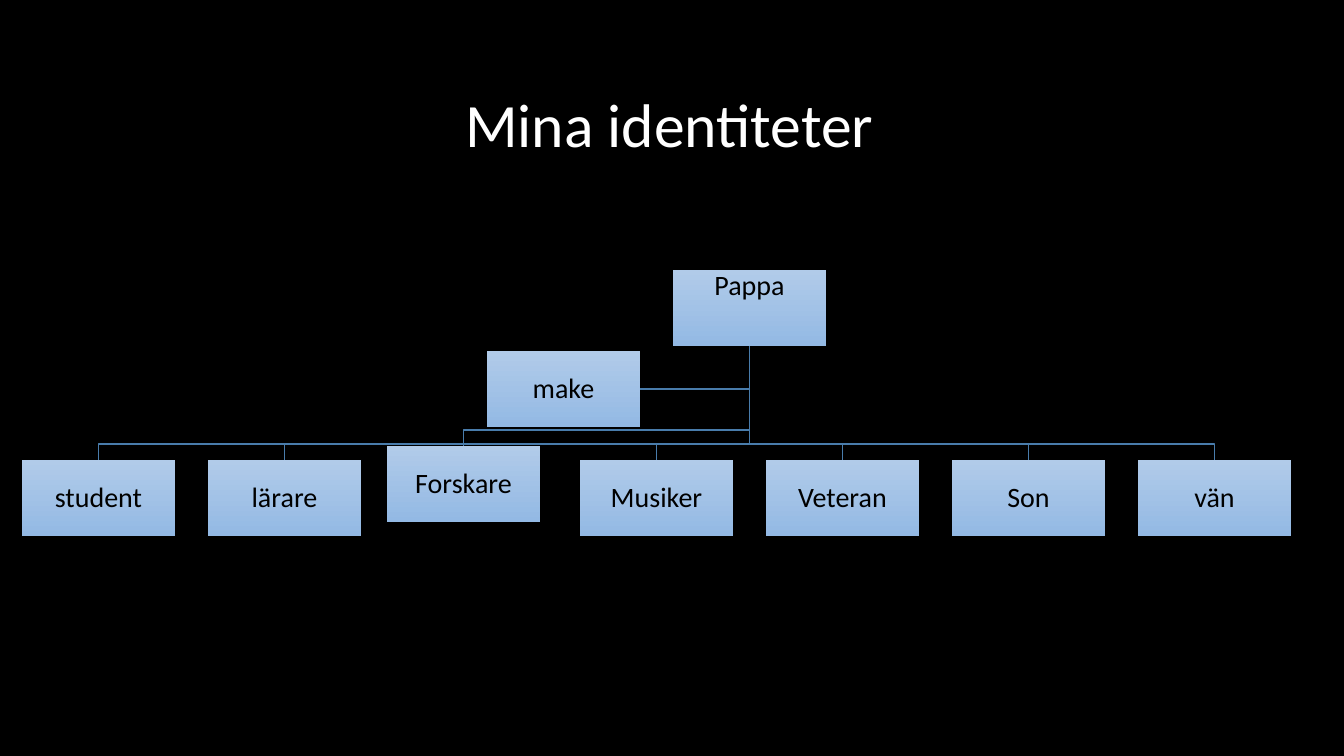
from pptx import Presentation
from pptx.dml.color import RGBColor
from pptx.enum.shapes import MSO_SHAPE
from pptx.enum.text import MSO_ANCHOR, PP_ALIGN
from pptx.util import Pt

PX = 914400 / 100.8
RECTANGLE = MSO_SHAPE.RECTANGLE
TOP, MIDDLE = MSO_ANCHOR.TOP, MSO_ANCHOR.MIDDLE
CENTER = PP_ALIGN.CENTER
COLORS = {
    "background": "000000",
    "title": "FFFFFF",
    "label": "000000",
    "line": "497CAB",
    "box_top": "B1CBE9",
    "box_bottom": "93B9E4",
}
BOX_WIDTH, BOX_HEIGHT = 153, 76


def px(length):
    return round(length * PX)


def write_text(shape, text, size, color, anchor, inset):
    frame = shape.text_frame
    frame.text = text
    frame.word_wrap = True
    frame.vertical_anchor = anchor
    frame.margin_left = frame.margin_right = px(inset)
    frame.margin_top = frame.margin_bottom = px(inset)
    paragraph = frame.paragraphs[0]
    paragraph.alignment = CENTER
    paragraph.line_spacing = 0.9
    font = paragraph.runs[0].font
    font.name = "Calibri"
    font.size = Pt(size)
    font.color.rgb = RGBColor.from_string(COLORS[color])


presentation = Presentation()
presentation.slide_width = px(1344)
presentation.slide_height = px(756)
slide = presentation.slides.add_slide(presentation.slide_layouts[6])
slide.background.fill.solid()
slide.background.fill.fore_color.rgb = RGBColor.from_string(COLORS["background"])

# Title
title = slide.shapes.add_textbox(px(90), px(55), px(1159), px(146))
write_text(title, "Mina identiteter", 44, "title", MIDDLE, 5)

# Boxes: parent, assistant and a row of evenly spaced children
parent = ("Pappa", 673, 270)
assistant = ("make", 487, 351)
names = ["student", "lärare", "Forskare", "Musiker", "Veteran", "Son", "vän"]
children = [(name, 22 + 186 * index, 460) for index, name in enumerate(names)]
children[2] = ("Forskare", 387, 446)

# Elbow lines from the parent
trunk_x = parent[1] + BOX_WIDTH / 2
trunk_y = parent[2] + BOX_HEIGHT
assistant_y = assistant[2] + BOX_HEIGHT / 2
routes = [[(trunk_x, assistant_y), (assistant[1] + BOX_WIDTH, assistant_y)]]
for name, left, top in children:
    center = left + BOX_WIDTH / 2
    routes.append([(trunk_x, top - 16), (center, top - 16), (center, top)])

for route in routes:
    builder = slide.shapes.build_freeform(px(trunk_x), px(trunk_y))
    builder.add_line_segments([(px(x), px(y)) for x, y in route], close=False)
    elbow = builder.convert_to_shape()
    elbow.shadow.inherit = False
    elbow.fill.background()
    elbow.line.color.rgb = RGBColor.from_string(COLORS["line"])
    elbow.line.width = Pt(1)

# Gradient boxes with labels
for name, left, top in [parent, *children, assistant]:
    box = slide.shapes.add_shape(
        RECTANGLE, px(left), px(top), px(BOX_WIDTH), px(BOX_HEIGHT))
    box.shadow.inherit = False
    box.line.fill.background()
    box.fill.gradient()
    box.fill.gradient_angle = 270
    for stop, position, color in zip(
            box.fill.gradient_stops, (0, 1), ("box_top", "box_bottom")):
        stop.position = position
        stop.color.rgb = RGBColor.from_string(COLORS[color])
    write_text(box, name, 20, "label", TOP if name == "Pappa" else MIDDLE, 1)

presentation.save("out.pptx")
